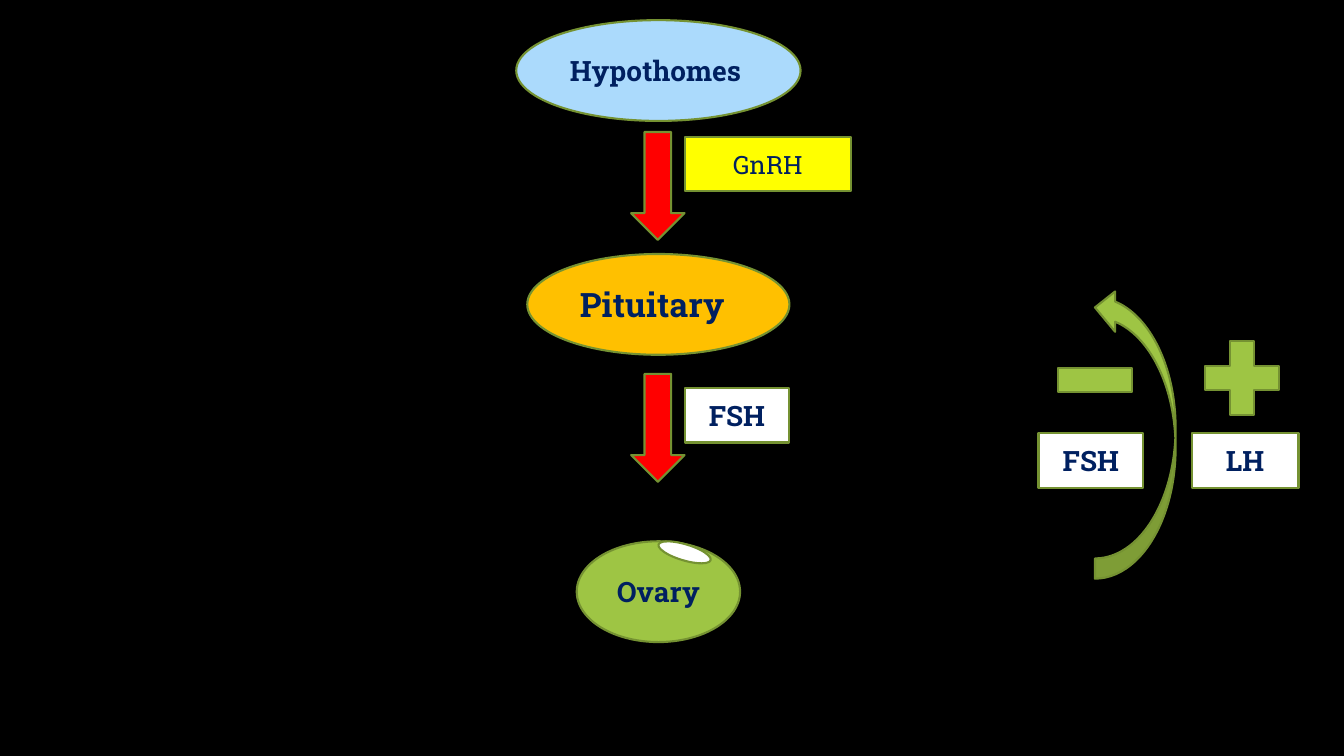
"""Build the slide on the hormone pathway from brain to ovary."""
from pptx import Presentation
from pptx.dml.color import RGBColor
from pptx.enum.shapes import MSO_SHAPE
from pptx.enum.text import MSO_ANCHOR, PP_ALIGN
from pptx.util import Pt

PX = 9144
FONT = "Roboto Slab"
COLORS = {
    "background": "000000",
    "outline": "759232",
    "text": "002060",
    "sky": "ABDAFC",
    "red": "FF0000",
    "yellow": "FFFF00",
    "amber": "FFC000",
    "green": "9EC544",
    "white": "FFFFFF",
}
OVAL = MSO_SHAPE.OVAL
RECTANGLE = MSO_SHAPE.RECTANGLE
DOWN_ARROW = MSO_SHAPE.DOWN_ARROW
CURVED_ARROW = MSO_SHAPE.CURVED_RIGHT_ARROW
PLUS = MSO_SHAPE.MATH_PLUS
MINUS = MSO_SHAPE.MATH_MINUS
MIDDLE = MSO_ANCHOR.MIDDLE
CENTER = PP_ALIGN.CENTER


def color(name):
    """Return the named colour."""
    return RGBColor.from_string(COLORS[name])


def add_part(slide, kind, box, fill, rotation=0):
    """Add one filled, outlined shape in the given box."""
    shape = slide.shapes.add_shape(kind, *(length * PX for length in box))
    shape.shadow.inherit = False
    shape.rotation = rotation
    shape.fill.solid()
    shape.fill.fore_color.rgb = color(fill)
    shape.line.color.rgb = color("outline")
    shape.line.width = Pt(1.5)
    return shape


def add_label(shape, text, size=20, bold=True, insets=(10, 10)):
    """Write a centred label in a shape."""
    frame = shape.text_frame
    frame_format = {
        "word_wrap": True,
        "vertical_anchor": MIDDLE,
        "margin_left": insets[0] * PX,
        "margin_right": insets[1] * PX,
    }
    for name, value in frame_format.items():
        setattr(frame, name, value)
    paragraph = frame.paragraphs[0]
    paragraph.alignment = CENTER
    run = paragraph.add_run()
    run.text = text
    for name, value in {"name": FONT, "size": Pt(size), "bold": bold}.items():
        setattr(run.font, name, value)
    run.font.color.rgb = color("text")


def add_pathway(slide, left, top, width):
    """Place organs, arrows and hormones along a vertical axis."""
    axis = left + width // 2
    organs = [
        ("Hypothomes", 0, 282, "sky", 20, (4, 10)),
        ("Pituitary", 232, 260, "amber", 24, (0, 12)),
        ("Ovary", 517, 162, "green", 20, (10, 10)),
    ]
    for text, offset, organ_width, fill, size, insets in organs:
        box = (axis - organ_width // 2, top + offset, organ_width, 100)
        add_label(add_part(slide, OVAL, box, fill), text, size, insets=insets)
    add_part(slide, OVAL, (axis - 1, top + 520, 54, 16), "white", 16.7)

    hormones = [
        ("GnRH", 111, 5, 165, "yellow", 18, False),
        ("FSH", 351, 14, 104, "white", 20, True),
    ]
    for text, offset, drop, label_width, fill, size, bold in hormones:
        arrow_top = top + offset
        add_part(slide, DOWN_ARROW, (axis - 27, arrow_top, 53, 107), "red")
        box = (axis + 26, arrow_top + drop, label_width, 54)
        add_label(add_part(slide, RECTANGLE, box, fill), text, size, bold)


def add_feedback(slide, left, top, height):
    """Place the feedback arrow between its negative and positive effects."""
    add_part(slide, CURVED_ARROW, (left + 56, top, 80, height), "green", 180)
    effects = [
        ("FSH", MINUS, 0, 6, 42, 104),
        ("LH", PLUS, 152, 152, 40, 106),
    ]
    for text, sign, label_x, sign_x, sign_y, label_width in effects:
        add_part(slide, sign, (left + sign_x, top + sign_y, 100, 100), "green")
        box = (left + label_x, top + 145, label_width, 54)
        add_label(add_part(slide, RECTANGLE, box, "white"), text)


def main():
    """Create the presentation and save it."""
    presentation = Presentation()
    presentation.slide_width = 1333 * PX
    presentation.slide_height = 750 * PX
    slide = presentation.slides.add_slide(presentation.slide_layouts[6])
    slide.background.fill.solid()
    slide.background.fill.fore_color.rgb = color("background")
    add_pathway(slide, 512, 20, 282)
    add_feedback(slide, 1030, 285, 289)
    presentation.save("out.pptx")


if __name__ == "__main__":
    main()
